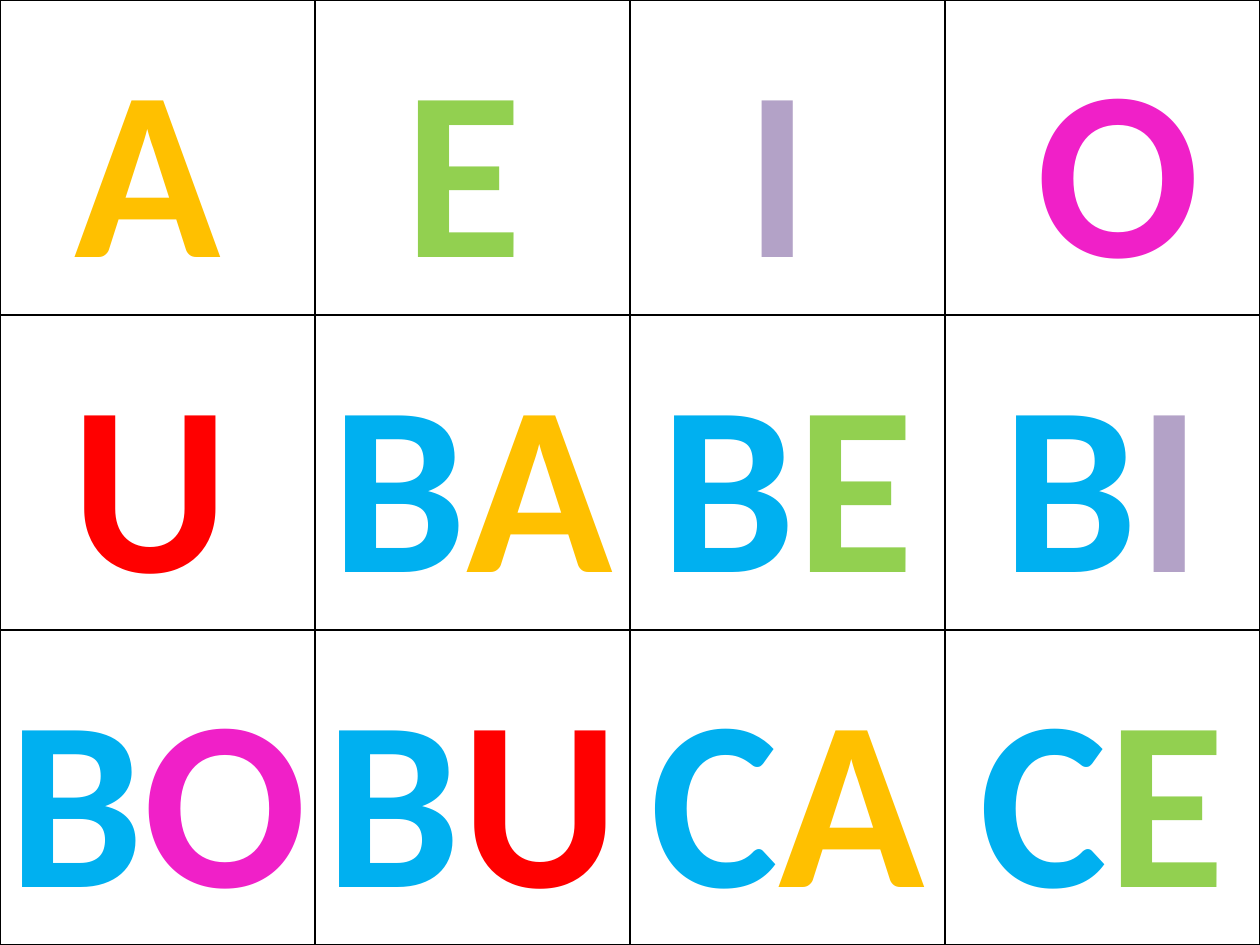
from lxml.etree import SubElement
from pptx import Presentation
from pptx.dml.color import RGBColor
from pptx.enum.text import MSO_AUTO_SIZE, PP_ALIGN
from pptx.oxml.ns import qn
from pptx.util import Emu, Pt

SCALE = 914400 / 126
CELL = 315
TOP_GAP, TEXT_HEIGHT = 10, 305
COLORS = {
    "A": "FFC000", "E": "92D050", "I": "B3A2C7", "O": "F020C8", "U": "FF0000",
    "B": "00B0F0", "C": "00B0F0",
    "paper": "FFFFFF", "grid": "000000", "outline": "054697",
}
NARROW, FULL, WIDE = (59, 178), (0, CELL), (-10, 335)
CARDS = [
    [("A", NARROW), ("E", NARROW), ("I", NARROW), ("O", (79, 178))],
    [("U", NARROW), ("BA", FULL), ("BE", FULL), ("BI", FULL)],
    [("BO", WIDE), ("BU", WIDE), ("CA", FULL), ("CE", FULL)],
]


def px(value):
    """Turn whole pixels into EMU."""
    return Emu(round(value * SCALE))


def add_solid_line(properties, tag, color):
    """Append a one-point solid line to the given XML properties."""
    line = SubElement(properties, qn(tag), w=str(Pt(1)))
    fill = SubElement(line, qn("a:solidFill"))
    SubElement(fill, qn("a:srgbClr"), val=COLORS[color])
    return line


def add_card_grid(slide, left, top, rows, columns):
    """Draw the white table with black borders that holds the cards."""
    frame = slide.shapes.add_table(
        rows, columns, px(left), px(top), px(columns * CELL), px(rows * CELL))
    for cell in frame.table.iter_cells():
        properties = cell._tc.get_or_add_tcPr()
        for tag in ("a:lnL", "a:lnR", "a:lnT", "a:lnB"):
            add_solid_line(properties, tag, "grid")
        cell.fill.solid()
        cell.fill.fore_color.rgb = RGBColor.from_string(COLORS["paper"])


def add_syllable(slide, left, top, width, height, syllable):
    """Write one syllable with each letter in its own colour."""
    shape = slide.shapes.add_textbox(px(left), px(top), px(width), px(height))
    frame = shape.text_frame
    frame.word_wrap = True
    frame.auto_size = MSO_AUTO_SIZE.SHAPE_TO_FIT_TEXT
    paragraph = frame.paragraphs[0]
    paragraph.alignment = PP_ALIGN.CENTER
    for letter in syllable:
        run = paragraph.add_run()
        run.text = letter
        font = run.font
        font.size, font.bold, font.name = Pt(138), True, "Calibri"
        font.color.rgb = RGBColor.from_string(COLORS[letter])
        properties = run._r.get_or_add_rPr()
        properties.insert(0, add_solid_line(properties, "a:ln", "outline"))


def add_syllable_cards(slide, left, top):
    """Place the grid and a syllable in each of its cells."""
    add_card_grid(slide, left, top, len(CARDS), len(CARDS[0]))
    for row, cards in enumerate(CARDS):
        for column, (syllable, (offset, width)) in enumerate(cards):
            add_syllable(slide, left + column * CELL + offset,
                         top + row * CELL + TOP_GAP, width, TEXT_HEIGHT, syllable)


def main():
    """Build and save the slide of syllable cards."""
    presentation = Presentation()
    presentation.slide_width, presentation.slide_height = px(1260), px(945)
    slide = presentation.slides.add_slide(presentation.slide_layouts[6])
    add_syllable_cards(slide, 0, 0)
    presentation.save("out.pptx")


if __name__ == "__main__":
    main()
